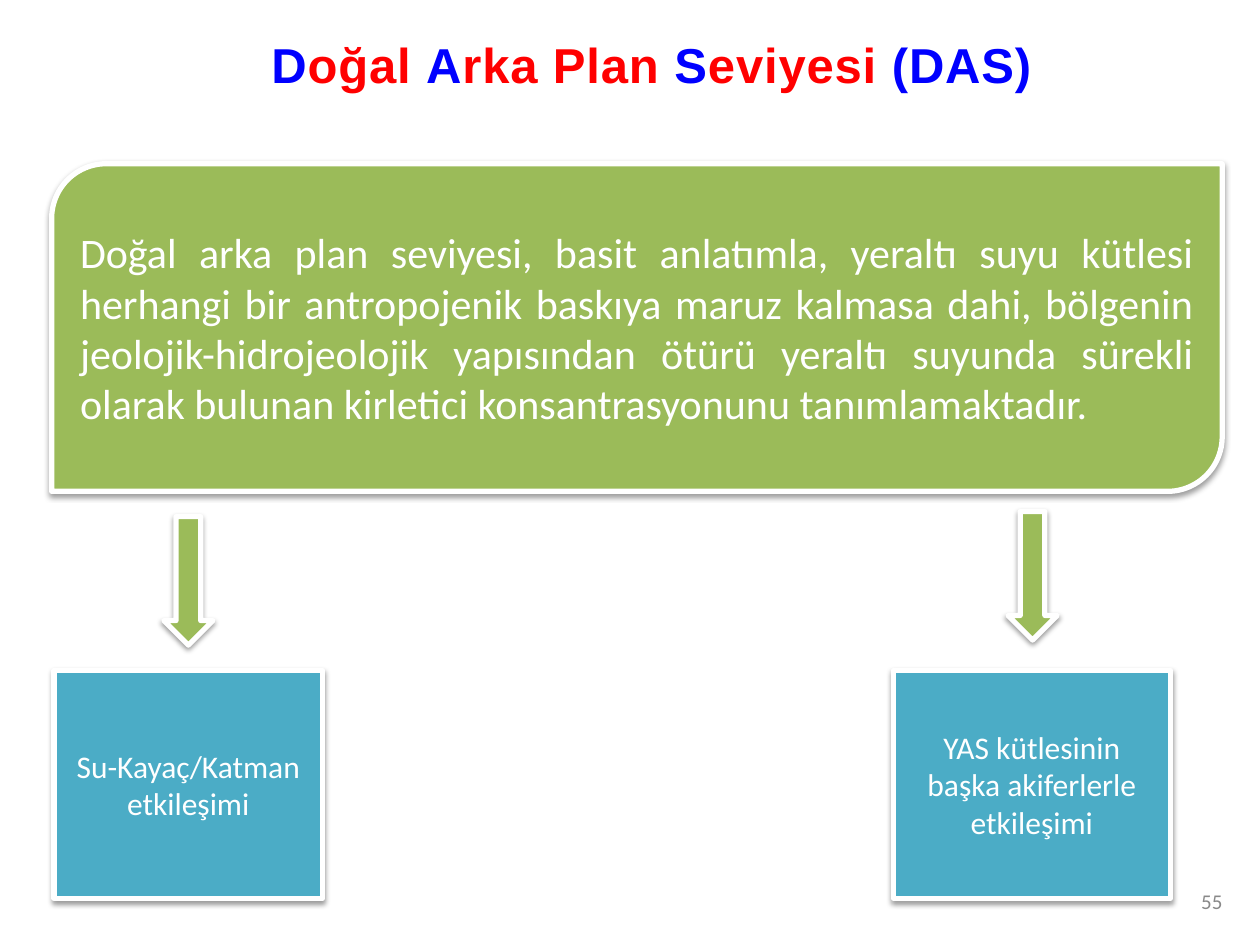
"""Build the slide on the natural background level of groundwater."""
from dataclasses import dataclass

import pptx
import pptx.dml.color
import pptx.enum.shapes
import pptx.enum.text
import pptx.oxml
import pptx.oxml.ns
import pptx.util

COLORS = {"red": "FF0000", "blue": "0000FF", "green": "9BBB59",
          "teal": "4BACC6", "white": "FFFFFF", "gray": "898989"}
COLUMNS, ROWS = 100, 75
SHAPE = pptx.enum.shapes.MSO_SHAPE
ALIGN = pptx.enum.text.PP_ALIGN
MIDDLE = pptx.enum.text.MSO_ANCHOR.MIDDLE
SHADOW = (
    f'<a:outerShdw {pptx.oxml.ns.nsdecls("a")} blurRad="39370" dist="20320" '
    'dir="5400000" rotWithShape="0"><a:srgbClr val="000000">'
    '<a:alpha val="38000"/></a:srgbClr></a:outerShdw>'
)


@dataclass(frozen=True)
class Area:
    """A place on the grid, in columns and rows."""
    col: float
    row: float
    cols: float
    rows: float

    def lengths(self, prs) -> tuple[int, int, int, int]:
        """Return left, top, width and height."""
        x, y = prs.slide_width / COLUMNS, prs.slide_height / ROWS
        return (round(self.col * x), round(self.row * y),
                round(self.cols * x), round(self.rows * y))


@dataclass(frozen=True)
class Block:
    """A filled shape with optional text."""
    kind: int
    area: Area
    fill: str
    text: str = ""
    size: int = 18
    align: int = ALIGN.CENTER


TITLE_AREA = Area(5.1, 0.7, 83.2, 6.9)
TITLE_PARTS = [("D", "blue"), ("oğal ", "red"), ("A", "blue"), ("rka Plan ", "red"),
               ("S", "blue"), ("eviyesi ", "red"), ("(DAS)", "blue")]
NUMBER_AREA = Area(93.2, 69.5, 4.8, 4)
BLOCKS = [
    Block(SHAPE.ROUND_2_DIAG_RECTANGLE, Area(4.1, 13, 92.9, 26), "green",
          "Doğal arka plan seviyesi, basit anlatımla, yeraltı suyu kütlesi herhangi "
          "bir antropojenik baskıya maruz kalmasa dahi, bölgenin "
          "jeolojik-hidrojeolojik yapısından ötürü yeraltı suyunda sürekli olarak "
          "bulunan kirletici konsantrasyonunu tanımlamaktadır.", 24, ALIGN.JUSTIFY),
    Block(SHAPE.DOWN_ARROW, Area(13, 41, 3.9, 10.2), "green"),
    Block(SHAPE.DOWN_ARROW, Area(80, 40.6, 3.9, 10.2), "green"),
    Block(SHAPE.RECTANGLE, Area(4.3, 53.2, 21.3, 18.1), "teal",
          "Su-Kayaç/Katman etkileşimi"),
    Block(SHAPE.RECTANGLE, Area(70.9, 53.2, 22, 18.1), "teal",
          "YAS kütlesinin başka akiferlerle etkileşimi"),
]


def rgb(name: str) -> pptx.dml.color.RGBColor:
    """Look up a colour."""
    return pptx.dml.color.RGBColor.from_string(COLORS[name])


def format_font(font, name: str, size: int, color: str) -> None:
    """Set the typeface, size and colour."""
    font.name, font.size = name, pptx.util.Pt(size)
    font.color.rgb = rgb(color)


def write(sp, text: str, size: int, color: str, align: int) -> None:
    """Put one vertically centred paragraph in a shape."""
    tf = sp.text_frame
    tf.word_wrap, tf.vertical_anchor = True, MIDDLE
    tf.text = text
    p = tf.paragraphs[0]
    p.alignment = align
    format_font(p.runs[0].font, "Calibri", size, color)


def add_title(prs, s) -> None:
    """Place and colour the title."""
    sp = s.shapes.title
    sp.left, sp.top, sp.width, sp.height = TITLE_AREA.lengths(prs)
    tf = sp.text_frame
    tf.word_wrap = True
    tf.auto_size = pptx.enum.text.MSO_AUTO_SIZE.NONE
    tf.vertical_anchor = pptx.enum.text.MSO_ANCHOR.TOP
    tf.margin_top, tf.margin_bottom = pptx.util.Inches(0.11), 0
    p = tf.paragraphs[0]
    p.alignment, p.line_spacing = ALIGN.CENTER, 1.2
    p._p.get_or_add_pPr().set("marL", str(pptx.util.Inches(1)))
    for text, color in TITLE_PARTS:
        r = p.add_run()
        r.text = text
        format_font(r.font, "Arial", 28, color)
        r.font.bold = True
        r._r.get_or_add_rPr().set("spc", "50")


def add_block(prs, s, block: Block) -> None:
    """Draw a white-edged shape with a soft shadow."""
    sp = s.shapes.add_shape(block.kind, *block.area.lengths(prs))
    sp.fill.solid()
    sp.fill.fore_color.rgb = rgb(block.fill)
    sp.line.color.rgb = rgb("white")
    sp.line.width = pptx.util.Pt(3)
    sp.shadow.inherit = False
    effects = sp._element.spPr.find(pptx.oxml.ns.qn("a:effectLst"))
    effects.append(pptx.oxml.parse_xml(SHADOW))
    if block.text:
        write(sp, block.text, block.size, "white", block.align)


def main() -> None:
    """Build and save the presentation."""
    prs = pptx.Presentation()
    prs.slide_width, prs.slide_height = pptx.util.Inches(10), pptx.util.Inches(7.5)
    s = prs.slides.add_slide(prs.slide_layouts.get_by_name("Title Only"))
    add_title(prs, s)
    for block in BLOCKS:
        add_block(prs, s, block)
    number = s.shapes.add_textbox(*NUMBER_AREA.lengths(prs))
    write(number, "55", 12, "gray", ALIGN.RIGHT)
    prs.save("out.pptx")


if __name__ == "__main__":
    main()
